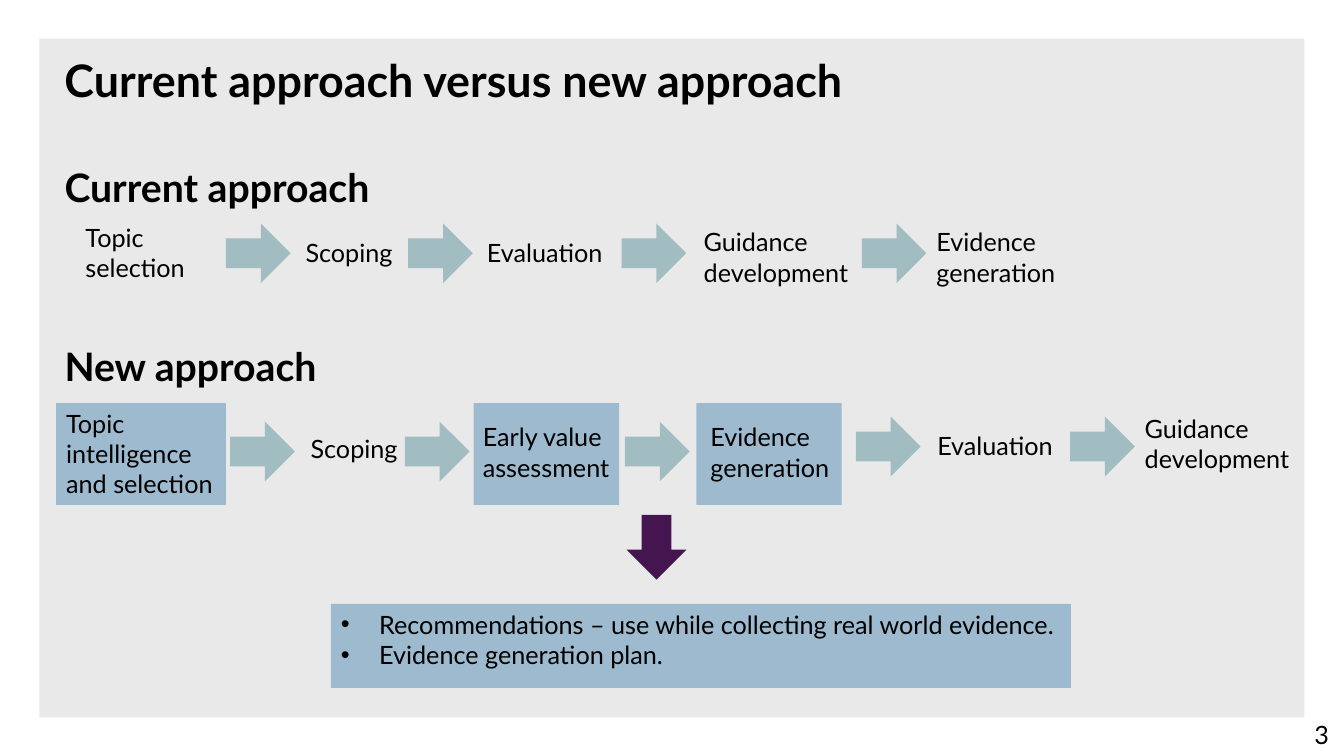
from dataclasses import dataclass

from lxml.etree import SubElement
from pptx import Presentation
from pptx.dml.color import RGBColor
from pptx.enum.shapes import MSO_SHAPE as Shape
from pptx.enum.text import MSO_ANCHOR as Anchor, PP_ALIGN as Align
from pptx.oxml.ns import qn
from pptx.util import Inches, Pt


@dataclass(frozen=True)
class Theme:
    font: str = "Lato"
    ink: str = "000000"
    panel: str = "E9E9E9"
    box: str = "9DBACE"
    arrow: str = "A2BDC1"
    outcome: str = "451550"
    title: int = 32
    heading: int = 28
    body: int = 18


THEME = Theme()
COLS, ROWS = 160, 90
WIDTH, HEIGHT = Inches(13.333), Inches(7.5)
ARROW_W, ARROW_H = 7.7, 7.1
LINE_H, STEP_H = 4.8, 8.5
BOX_TOP, BOX_H = 48, 12.1


def cells(x, y, w, h):
    return (round(x * WIDTH / COLS), round(y * HEIGHT / ROWS),
            round(w * WIDTH / COLS), round(h * HEIGHT / ROWS))


def write(sp, text, size=THEME.body, bold=False, align=Align.LEFT):
    tf = sp.text_frame
    tf.word_wrap = True
    tf.vertical_anchor = Anchor.TOP
    tf.text = text
    for p in tf.paragraphs:
        p.alignment = align
        for r in p.runs:
            r.font.name = THEME.font
            r.font.size = Pt(size)
            r.font.bold = bold
            r.font.color.rgb = RGBColor.from_string(THEME.ink)


def add_text(s, area, text, **style):
    sp = s.shapes.add_textbox(*cells(*area))
    write(sp, text, **style)
    return sp


def add_block(s, area, color, kind=Shape.RECTANGLE):
    sp = s.shapes.add_shape(kind, *cells(*area))
    sp.shadow.inherit = False
    sp.fill.solid()
    sp.fill.fore_color.rgb = RGBColor.from_string(color)
    sp.line.fill.background()
    return sp


def add_arrow(s, x, y, color=THEME.arrow):
    return add_block(s, (x, y, ARROW_W, ARROW_H), color, Shape.RIGHT_ARROW)


def add_bullets(sp):
    indent = Inches(0.38)
    for p in sp.text_frame.paragraphs:
        pPr = p._p.get_or_add_pPr()
        pPr.set("marL", str(indent))
        pPr.set("indent", str(-indent))
        SubElement(pPr, qn("a:buFont")).set("typeface", "Arial")
        SubElement(pPr, qn("a:buChar")).set("char", "•")


def add_flow(s, heading_top, heading, arrows, steps):
    add_text(s, (6.5, heading_top, 41.8, 6.8), heading,
             size=THEME.heading, bold=True)
    for x, y in arrows:
        add_arrow(s, x, y)
    for x, y, w, text in steps:
        h = STEP_H if " " in text else LINE_H
        add_text(s, (x, y, w, h), text)


def add_current_approach(s):
    arrows = [(x, 26.6) for x in (26.9, 48.6, 74, 102.6)]
    steps = [
        (9, 25.9, 21.4, "Topic selection"),
        (35.2, 27.7, 13.2, "Scoping"),
        (56.8, 27.7, 16.6, "Evaluation"),
        (82.6, 26.4, 25.6, "Guidance development"),
        (110.3, 26.4, 25.6, "Evidence generation"),
    ]
    add_flow(s, 18.8, "Current approach", arrows, steps)


def add_new_approach(s):
    topic = add_block(s, (6.7, BOX_TOP, 20.2, BOX_H), THEME.box)
    write(topic, "Topic intelligence and selection")
    for x in (56.4, 82.9):
        add_block(s, (x, BOX_TOP, 17.3, BOX_H), THEME.box)
    arrows = [(27.4, 50.2), (48.2, 50.2), (74.4, 50.2),
              (101.9, 49.6), (127.4, 49.6)]
    steps = [
        (35.8, 51, 13.2, "Scoping"),
        (56.3, 49.6, 18, "Early value assessment"),
        (83.4, 49.6, 17, "Evidence generation"),
        (110.4, 50.6, 25.6, "Evaluation"),
        (135.1, 48.6, 20, "Guidance development"),
    ]
    add_flow(s, 40.2, "New approach", arrows, steps)


def add_outcome(s):
    add_arrow(s, 74.3, 61.6, THEME.outcome).rotation = 90
    sp = add_block(s, (39.4, 71.9, 88.1, 10), THEME.box)
    write(sp, "Recommendations – use while collecting real world evidence.\n"
              "Evidence generation plan.")
    add_bullets(sp)


def main():
    prs = Presentation()
    prs.slide_width, prs.slide_height = WIDTH, HEIGHT
    s = prs.slides.add_slide(prs.slide_layouts[6])
    add_block(s, (4.7, 4.6, 150.6, 80.8), THEME.panel)
    add_text(s, (137.3, 85.1, 22.1, LINE_H), "3", align=Align.RIGHT)
    title = add_text(s, (6.5, 6.4, 145.3, 16.8),
                     "Current approach versus new approach",
                     size=THEME.title, bold=True)
    title.text_frame.paragraphs[0].line_spacing = 0.9
    add_current_approach(s)
    add_new_approach(s)
    add_outcome(s)
    prs.save("out.pptx")


if __name__ == "__main__":
    main()
